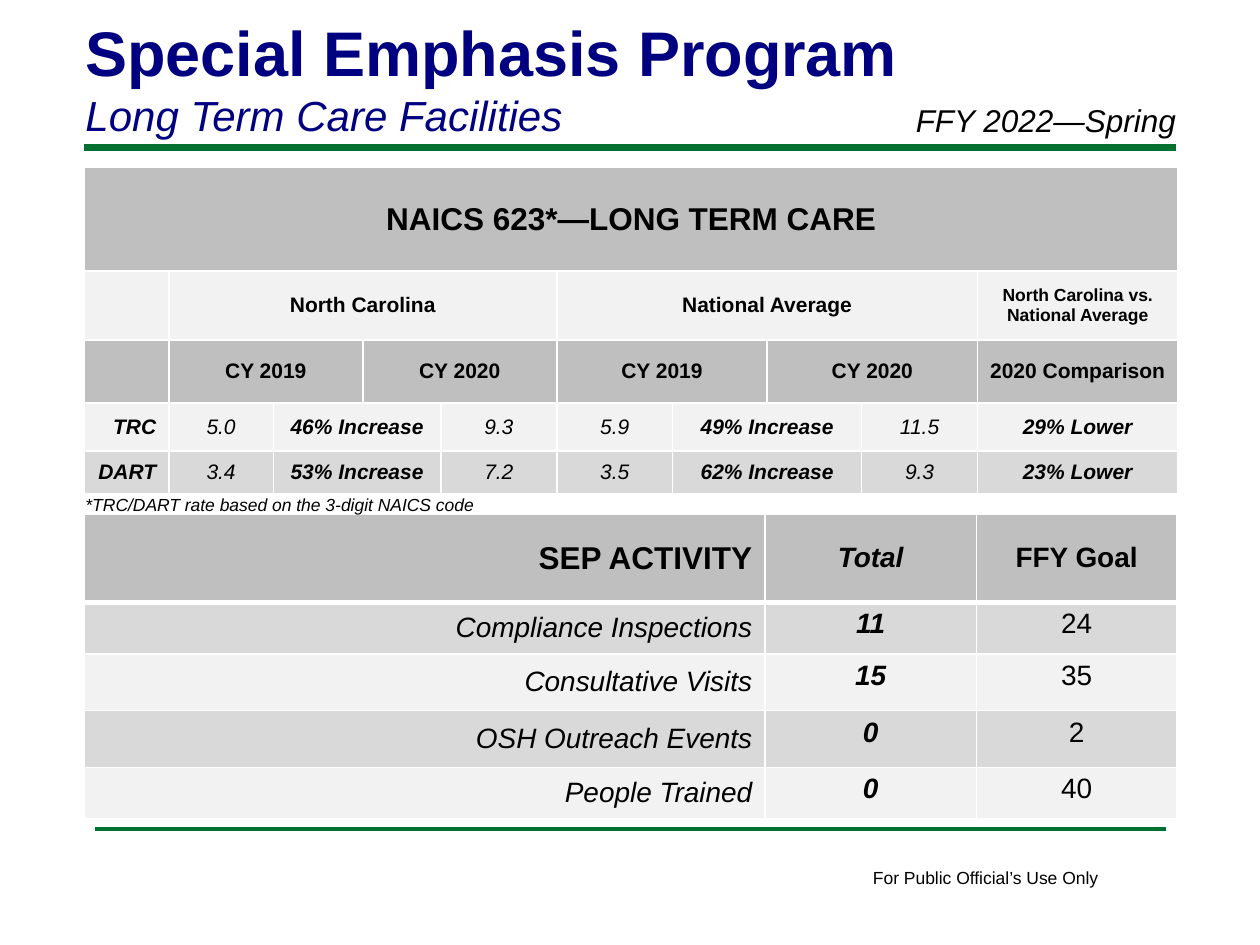
from lxml import etree
from pptx import Presentation
from pptx.dml.color import RGBColor
from pptx.enum.shapes import MSO_CONNECTOR
from pptx.enum.text import MSO_ANCHOR as ANCHOR, MSO_AUTO_SIZE as FIT, PP_ALIGN as ALIGN
from pptx.oxml.ns import qn
from pptx.util import Inches, Pt

COLORS = {
    "text": "000000",
    "title": "000080",
    "rule": "007030",
    "header": "BFBFBF",
    "dark": "D9D9D9",
    "light": "F2F2F2",
    "border": "FFFFFF",
}
FONT = "Arial"
LEFT, RIGHT = 0.67, 9.33


class SlideBuilder:
    def __init__(self, slide):
        self.slide = slide

    def style(self, p, size, marks="", color="text"):
        """Set the paragraph font; marks may hold b (bold) and i (italic)."""
        p.font.name = FONT
        p.font.size = Pt(size)
        p.font.bold = "b" in marks
        p.font.italic = "i" in marks
        p.font.color.rgb = RGBColor.from_string(COLORS[color])

    def rule(self, x1, x2, y, width):
        line = self.slide.shapes.add_connector(
            MSO_CONNECTOR.STRAIGHT, Inches(x1), Inches(y), Inches(x2), Inches(y))
        line.line.color.rgb = RGBColor.from_string(COLORS["rule"])
        line.line.width = Pt(width)
        etree.SubElement(line._element.spPr, qn("a:effectLst"))

    def text(self, box, lines, color="text", wrap=True):
        """Add a text box; each line is (text, size, marks)."""
        sp = self.slide.shapes.add_textbox(*map(Inches, box))
        tf = sp.text_frame
        tf.word_wrap = wrap
        tf.auto_size = FIT.SHAPE_TO_FIT_TEXT
        for i, (text, size, marks) in enumerate(lines):
            p = tf.add_paragraph() if i else tf.paragraphs[0]
            p.text = text
            self.style(p, size, marks, color)

    def borders(self, cell, bottom):
        tc_pr = cell._tc.get_or_add_tcPr()
        for i, (side, width) in enumerate(
                [("lnL", 1), ("lnR", 1), ("lnT", 1), ("lnB", bottom)]):
            ln = etree.Element(qn(f"a:{side}"), w=str(Pt(width)))
            fill = etree.SubElement(ln, qn("a:solidFill"))
            etree.SubElement(fill, qn("a:srgbClr"), val=COLORS["border"])
            tc_pr.insert(i, ln)

    def table(self, top, widths, heights, fills, rows, header_rule=1):
        """Add a table; each row lists (text, span, size, marks, align, anchor)."""
        frame = self.slide.shapes.add_table(
            len(heights), len(widths), Inches(LEFT), Inches(top),
            Inches(sum(widths)), Inches(sum(heights)))
        table = frame.table
        for column, width in zip(table.columns, widths):
            column.width = Inches(width)
        for r, (height, fill, row) in enumerate(zip(heights, fills, rows)):
            table.rows[r].height = Inches(height)
            for c in range(len(widths)):
                cell = table.cell(r, c)
                cell.fill.solid()
                cell.fill.fore_color.rgb = RGBColor.from_string(COLORS[fill])
                self.borders(cell, 1 if r else header_rule)
            c = 0
            for text, span, size, marks, align, anchor in row:
                cell = table.cell(r, c)
                if span > 1:
                    cell.merge(table.cell(r, c + span - 1))
                cell.vertical_anchor = anchor
                cell.margin_left = cell.margin_right = Inches(0.1)
                p = cell.text_frame.paragraphs[0]
                p.text = text
                p.alignment = align
                self.style(p, size, marks)
                c += span


def entry(text, span=1, size=12, marks="b", align=ALIGN.CENTER, anchor=ANCHOR.MIDDLE):
    return text, span, size, marks, align, anchor


def rate_row(name, nc_2019, nc_change, nc_2020, us_2019, us_change, us_2020, comparison):
    row = [entry(name, marks="bi", align=ALIGN.RIGHT)]
    for first, change, last in ((nc_2019, nc_change, nc_2020),
                                (us_2019, us_change, us_2020)):
        row += [entry(first, marks="i"), entry(change, 2, marks="bi"),
                entry(last, marks="i")]
    return row + [entry(comparison, marks="bi")]


def activity_row(name, total, goal):
    return [entry(name, size=16, marks="i", align=ALIGN.RIGHT),
            entry(total, size=16, marks="bi", anchor=ANCHOR.TOP),
            entry(goal, size=16, marks="", anchor=ANCHOR.TOP)]


def main():
    prs = Presentation()
    prs.slide_width, prs.slide_height = Inches(10), Inches(7.5)
    s = SlideBuilder(prs.slides.add_slide(prs.slide_layouts[6]))

    s.rule(LEFT, RIGHT, 1.17, 4)
    s.rule(0.75, 9.25, 6.58, 2)
    s.text((6.83, 6.83, 2.01, 0.27), [("For Public Official’s Use Only", 10, "")], wrap=False)
    s.text((0.58, 0.06, 8.25, 1.11),
           [("Special Emphasis Program", 36, "b"), ("Long Term Care Facilities", 24, "i")],
           color="title")

    activities = [("Compliance Inspections", "11", "24"), ("Consultative Visits", "15", "35"),
                  ("OSH Outreach Events", "0", "2"), ("People Trained", "0", "40")]
    s.table(4.08, [5.4, 1.68, 1.59], [0.7, 0.41, 0.45, 0.45, 0.41],
            ["header"] + ["dark", "light"] * 2,
            [[entry("SEP ACTIVITY", size=18, align=ALIGN.RIGHT),
              entry("Total", size=16, marks="bi"), entry("FFY Goal", size=16)]]
            + [activity_row(*a) for a in activities],
            header_rule=3)

    years = [entry("CY 2019", 2), entry("CY 2020", 2)]
    s.table(1.33, [0.67, 0.83, 0.71, 0.62, 0.92, 0.92, 0.75, 0.75, 0.92, 1.59],
            [0.82, 0.55, 0.5, 0.38, 0.34],
            ["header", "light", "header", "light", "dark"],
            [[entry("NAICS 623*—LONG TERM CARE", 10, 18)],
             [entry(""), entry("North Carolina", 4), entry("National Average", 4),
              entry("North Carolina vs. National Average", size=10)],
             [entry(""), *years, *years, entry("2020 Comparison")],
             rate_row("TRC", "5.0", "46% Increase", "9.3",
                      "5.9", "49% Increase", "11.5", "29% Lower"),
             rate_row("DART", "3.4", "53% Increase", "7.2",
                      "3.5", "62% Increase", "9.3", "23% Lower")])

    s.text((0.58, 3.87, 3.38, 0.27),
           [("*TRC/DART rate based on the 3-digit NAICS code", 10, "i")], wrap=False)
    s.text((7.17, 0.75, 2.5, 0.4), [("FFY 2022—Spring", 18, "i")])
    prs.save("out.pptx")


if __name__ == "__main__":
    main()
